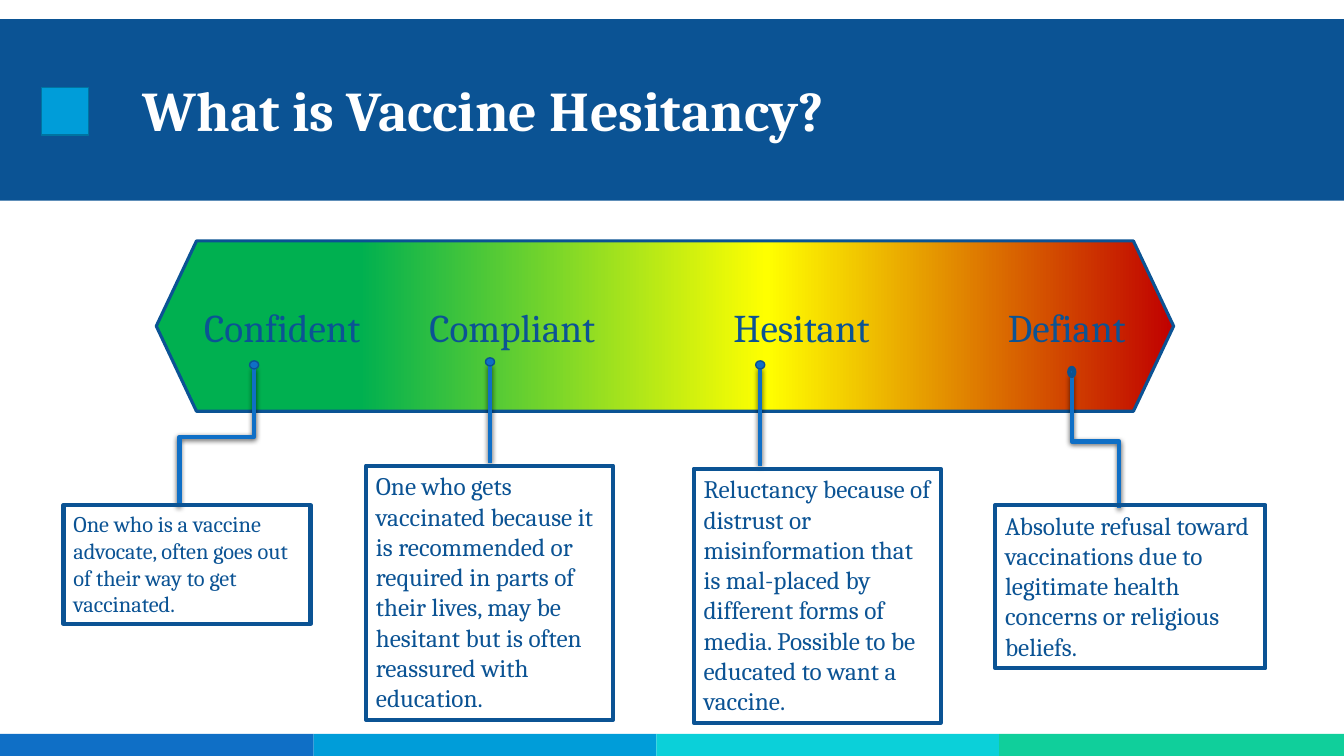
"""Build the slide on the range of vaccine hesitancy."""
import copy
import dataclasses

import lxml.etree
import pptx
import pptx.dml.color
import pptx.enum.shapes
import pptx.enum.text
import pptx.oxml.ns
import pptx.util

Inches = pptx.util.Inches
Kind = pptx.enum.shapes.MSO_SHAPE
Link = pptx.enum.shapes.MSO_CONNECTOR
Align = pptx.enum.text.PP_ALIGN
Anchor = pptx.enum.text.MSO_ANCHOR
qn = pptx.oxml.ns.qn


@dataclasses.dataclass(frozen=True)
class Theme:
    font: str = "Cambria"
    white: str = "FFFFFF"
    navy: str = "0B5394"
    blue: str = "0F6FC6"
    sky: str = "009DD9"
    aqua: str = "0BD0D9"
    mint: str = "10CF9B"
    edge: str = "0074A1"
    rim: str = "0B5292"
    shade: str = "000000"
    scale: tuple = ((0.2, "00B050"), (0.6, "FFFF00"), (1, "C00000"))
    title: int = 40
    label: int = 28
    body: int = 18
    small: int = 16


THEME = Theme()


def color(code):
    return pptx.dml.color.RGBColor.from_string(code)


def add_form(slide, kind, place, fill=None, line=None, width=1):
    form = slide.shapes.add_shape(kind, *map(Inches, place))
    form.shadow.inherit = False
    if fill:
        form.fill.solid()
        form.fill.fore_color.rgb = color(fill)
    else:
        form.fill.background()
    if line:
        form.line.color.rgb = color(line)
        form.line.width = pptx.util.Pt(width)
    else:
        form.line.fill.background()
    return form


def set_text(shape, text, size, code, align=Align.LEFT, anchor=Anchor.TOP, bold=False):
    frame = shape.text_frame
    frame.word_wrap = True
    frame.vertical_anchor = anchor
    frame.text = text
    para = frame.paragraphs[0]
    para.alignment = align
    font = para.runs[0].font
    font.name, font.size, font.bold = THEME.font, pptx.util.Pt(size), bold
    font.color.rgb = color(code)
    return para


def add_text(slide, place, *args, **style):
    box = slide.shapes.add_textbox(*map(Inches, place))
    return set_text(box, *args, **style)


def add_scale(slide):
    arrow = add_form(slide, Kind.LEFT_RIGHT_ARROW, (1.55, 2.39, 10.09, 1.69),
                     line=THEME.navy, width=2.25)
    arrow.adjustments[0] = 1
    arrow.adjustments[1] = 0.236
    arrow.fill.gradient()
    arrow.fill.gradient_angle = 0
    stops = arrow._element.spPr.find(".//" + qn("a:gsLst"))
    stops.append(copy.deepcopy(stops[-1]))
    for stop, (spot, code) in zip(arrow.fill.gradient_stops, THEME.scale):
        stop.position = spot
        stop.color.rgb = color(code)


def add_shade(link):
    group = lxml.etree.SubElement(link._element.spPr, qn("a:effectLst"))
    shade = lxml.etree.SubElement(group, qn("a:outerShdw"), blurRad="50800",
                                  dist="15240", dir="5400000", rotWithShape="0")
    tint = lxml.etree.SubElement(shade, qn("a:srgbClr"), val=THEME.shade)
    lxml.etree.SubElement(tint, qn("a:alpha"), val="68000")


def add_link(slide, start, end):
    """Draw a straight or bent line that leaves and arrives vertically."""
    (x1, y1), (x2, y2) = start, end
    if x1 == x2:
        link = slide.shapes.add_connector(Link.STRAIGHT, *map(Inches, start + end))
    else:
        mid, half = (x1 + x2) / 2, (y2 - y1) / 2
        side = 1 if x2 > x1 else -1
        rise = abs(x2 - x1) / 2
        level = (y1 + y2) / 2
        ends = (mid + side * half, level - rise, mid - side * half, level + rise)
        link = slide.shapes.add_connector(Link.ELBOW, *map(Inches, ends))
        turn = 270 if side > 0 else 90
        link._element.spPr.find(qn("a:xfrm")).set("rot", str(turn * 60000))
    link.line.color.rgb = color(THEME.blue)
    link.line.width = pptx.util.Pt(3)
    add_shade(link)


def add_stage(slide, name, mid, start, end, dot, place, text, size):
    add_text(slide, (mid - 1.1, 2.96, 2.2, 0.57), name, THEME.label, THEME.navy,
             align=Align.CENTER)
    add_link(slide, start, end)
    wide, line = dot
    add_form(slide, Kind.OVAL, (start[0] - wide / 2, start[1] - 0.07, wide, 0.08),
             THEME.blue, THEME.rim, line)
    box = add_form(slide, Kind.RECTANGLE, place, line=THEME.navy, width=3)
    set_text(box, text, size, THEME.navy)


def add_frame(slide):
    add_form(slide, Kind.RECTANGLE, (0, 0.19, 13.33, 1.8), THEME.navy)
    left = 0
    for wide, code in ((3.11, THEME.blue), (3.4, THEME.sky),
                       (3.4, THEME.aqua), (3.42, THEME.mint)):
        add_form(slide, Kind.RECTANGLE, (left, 7.28, wide, 0.22), code)
        left += wide
    add_form(slide, Kind.RECTANGLE, (0.41, 0.87, 0.47, 0.47), THEME.sky, THEME.edge)
    para = add_text(slide, (1.32, 0.31, 10.7, 1.65), "What is Vaccine Hesitancy?",
                    THEME.title, THEME.white, anchor=Anchor.MIDDLE, bold=True)
    para.line_spacing = 0.85


def main():
    deck = pptx.Presentation()
    deck.slide_width, deck.slide_height = Inches(13.33), Inches(7.5)
    slide = deck.slides.add_slide(deck.slide_layouts[6])
    add_frame(slide)
    add_scale(slide)
    stages = (
        ("Confident", 2.8, (2.52, 3.65), (1.78, 5.02), (0.09, 1),
         (0.63, 5.01, 2.45, 1.18),
         "One who is a vaccine advocate, often goes out of their way to get vaccinated.",
         THEME.small),
        ("Compliant", 5.08, (4.86, 3.62), (4.86, 4.59), (0.09, 1),
         (3.63, 4.62, 2.45, 2.52),
         "One who gets vaccinated because it is recommended or required in parts of "
         "their lives, may be hesitant but is often reassured with education.",
         THEME.body),
        ("Hesitant", 7.95, (7.54, 3.65), (7.54, 4.62), (0.09, 1),
         (6.88, 4.65, 2.45, 2.52),
         "Reluctancy because of distrust or misinformation that is mal-placed by "
         "different forms of media. Possible to be educated to want a vaccine.",
         THEME.body),
        ("Defiant", 10.58, (10.63, 3.72), (11.1, 5.04), (0.05, 3),
         (9.87, 5.01, 2.68, 1.62),
         "Absolute refusal toward vaccinations due to legitimate health concerns or "
         "religious beliefs.",
         THEME.body),
    )
    for stage in stages:
        add_stage(slide, *stage)
    deck.save("out.pptx")


if __name__ == "__main__":
    main()
